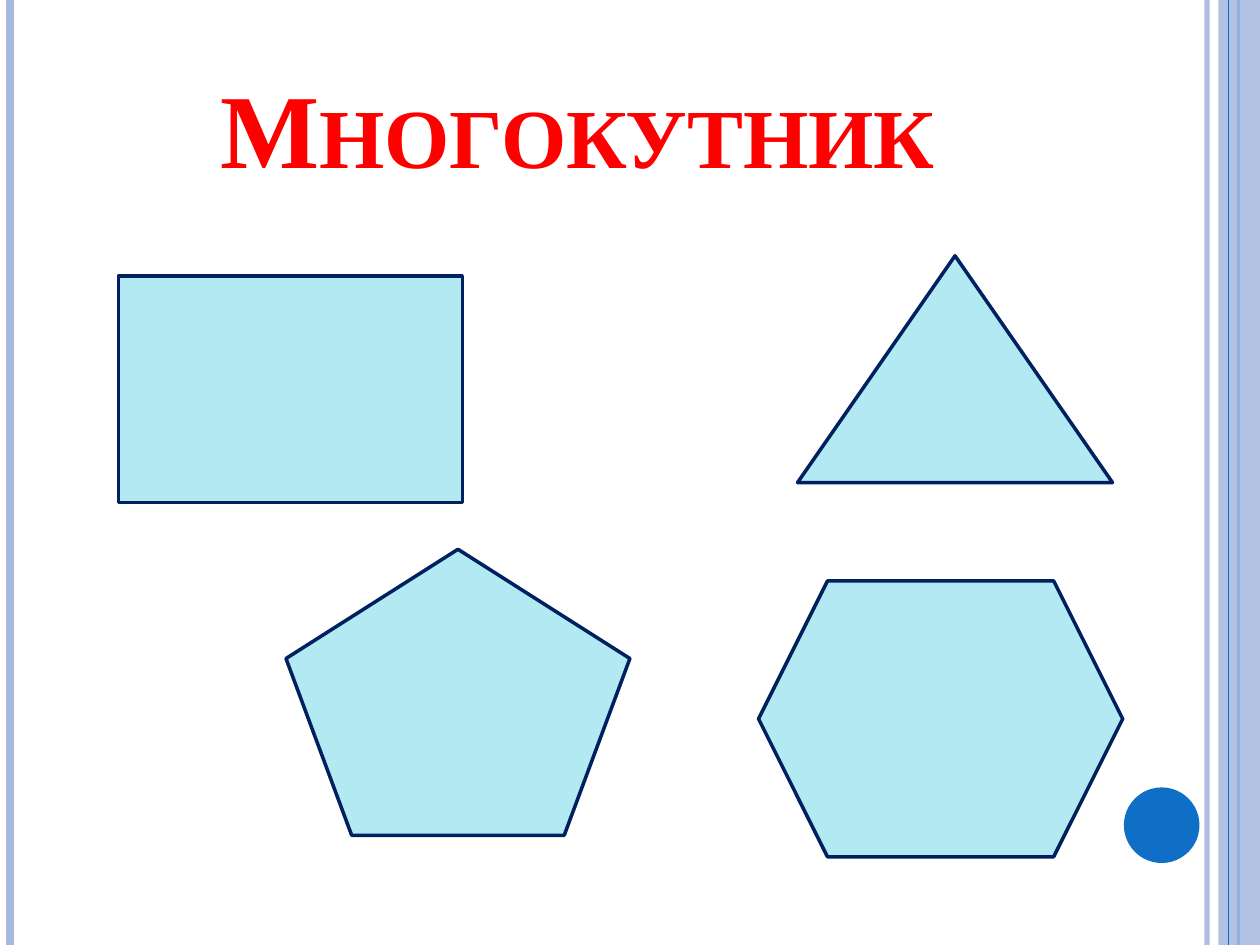
"""Build a slide titled with the word for polygon, showing four polygons."""
from lxml import etree
from pptx import Presentation
from pptx.dml.color import RGBColor
from pptx.enum.shapes import MSO_CONNECTOR, MSO_SHAPE
from pptx.enum.text import MSO_ANCHOR, PP_ALIGN
from pptx.oxml.ns import qn
from pptx.util import Inches, Pt

STRAIGHT = MSO_CONNECTOR.STRAIGHT
RECTANGLE, OVAL = MSO_SHAPE.RECTANGLE, MSO_SHAPE.OVAL
TRIANGLE = MSO_SHAPE.ISOSCELES_TRIANGLE
PENTAGON, HEXAGON = MSO_SHAPE.REGULAR_PENTAGON, MSO_SHAPE.HEXAGON
BOTTOM, CENTER = MSO_ANCHOR.BOTTOM, PP_ALIGN.CENTER

COLORS = {"pale": "A8B9DF", "blue": "0F6FC6", "title": "FF0000",
          "polygon": "B2E9F2", "outline": "002060"}
TITLE = "Многокутник"
FONT = "Times New Roman"

# Positions and sizes are percentages of the slide.
TITLE_AREA = (5, 4, 81.7, 16.67)
STRIPES_BEHIND = [(95.8, "pale", 3, 93), (0.8, "pale", 4.5, 100), (98.3, "blue", 1.5, 100)]
BAND_AREA = (96.7, 0, 3.3, 100)
STRIPE_ON_BAND = (97.5, "blue", 0.75, 100)
DOT_AREA = (89.2, 83.33, 6, 8)
POLYGONS = [
    (RECTANGLE, (9.4, 29.2, 27.3, 24)),
    (TRIANGLE, (63.3, 27.07, 25, 24)),
    (PENTAGON, (22.7, 58.13, 27.3, 30.27)),
    (HEXAGON, (60.2, 61.47, 28.9, 29.2)),
]

deck = Presentation()
deck.slide_width, deck.slide_height = Inches(10), Inches(7.5)
page = deck.slides.add_slide(deck.slide_layouts[6])


def place(area):
    sizes = (deck.slide_width, deck.slide_height) * 2
    return [round(size * share / 100) for size, share in zip(sizes, area)]


def paint(fill, color, opacity=100):
    fill.solid()
    fill.fore_color.rgb = RGBColor.from_string(COLORS[color])
    if opacity < 100:
        tint = fill._xPr.find(qn("a:solidFill"))[0]
        etree.SubElement(tint, qn("a:alpha")).set("val", str(opacity * 1000))


def add_stripe(left, color, width, opacity):
    x = round(deck.slide_width * left / 100)
    stripe = page.shapes.add_connector(STRAIGHT, x, 0, x, deck.slide_height)
    stripe.line.width = Pt(width)
    paint(stripe.line.fill, color, opacity)
    etree.SubElement(stripe._element.spPr, qn("a:effectLst"))


def add_figure(kind, area, color, opacity=100, outline=None):
    figure = page.shapes.add_shape(kind, *place(area))
    figure.shadow.inherit = False
    paint(figure.fill, color, opacity)
    if outline:
        figure.line.width = Pt(2)
        paint(figure.line.fill, outline)
    else:
        figure.line.fill.background()


def add_title():
    box = page.shapes.add_textbox(*place(TITLE_AREA))
    box.text_frame.word_wrap = True
    box.text_frame.vertical_anchor = BOTTOM
    para = box.text_frame.paragraphs[0]
    para.alignment = CENTER
    span = para.add_run()
    span.text = TITLE
    span.font.name, span.font.size, span.font.bold = FONT, Pt(60), True
    span.font.color.rgb = RGBColor.from_string(COLORS["title"])
    span.font._element.set("cap", "small")


for stripe_data in STRIPES_BEHIND:
    add_stripe(*stripe_data)
add_figure(RECTANGLE, BAND_AREA, "pale", opacity=87)
add_stripe(*STRIPE_ON_BAND)
add_figure(OVAL, DOT_AREA, "blue")
add_title()
for kind, area in POLYGONS:
    add_figure(kind, area, "polygon", outline="outline")

deck.save("out.pptx")
